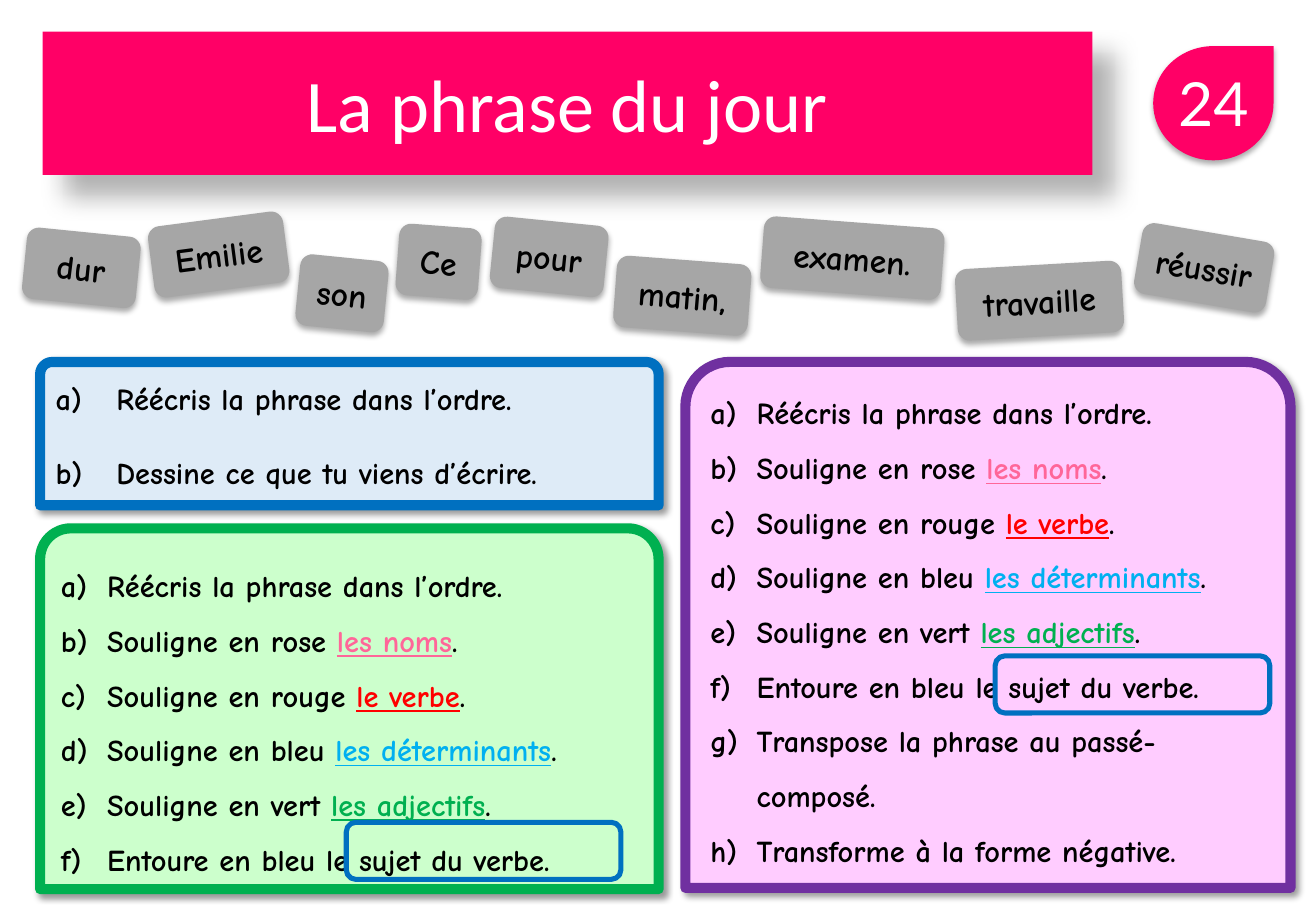
"""Build the daily sentence slide with word tiles and three task panels."""
from lxml import etree
from pptx import Presentation
from pptx.dml.color import RGBColor
from pptx.enum.shapes import MSO_SHAPE
from pptx.enum.text import MSO_ANCHOR, MSO_AUTO_SIZE, PP_ALIGN
from pptx.oxml.ns import qn
from pptx.util import Emu, Inches, Pt

ROUND, PANEL, DROP = MSO_SHAPE.ROUNDED_RECTANGLE, MSO_SHAPE.ROUND_2_SAME_RECTANGLE, MSO_SHAPE.TEAR
CENTER, LEFT, MIDDLE = PP_ALIGN.CENTER, PP_ALIGN.LEFT, MSO_ANCHOR.MIDDLE
WIDTH, HEIGHT = 10.83, 7.5
PINK, GREY, BLUE = "FF0066", "A6A6A6", "0070C0"

TITLE, NUMBER = "La phrase du jour", "24"
TILE_H = 0.59
WORDS = [
    ("dur", 0.2, 1.91, 0.94, 5.7),
    ("Emilie", 1.24, 1.8, 1.12, -7.5),
    ("son", 2.45, 2.12, 0.73, 5.7),
    ("Ce", 3.27, 1.86, 0.68, 4.3),
    ("pour", 4.05, 1.82, 0.94, 5.7),
    ("matin,", 5.06, 2.14, 1.11, 4.3),
    ("examen.", 6.27, 1.83, 1.49, 4.3),
    ("travaille", 7.87, 2.18, 1.37, -3.3),
    ("réussir", 9.36, 1.91, 1.1, 9.6),
]
REWRITE = [("Réécris la phrase dans l’ordre.", None)]
MARKS = [
    ("rose", "les noms", "FF6699"),
    ("rouge", "le verbe", "FF0000"),
    ("bleu", "les déterminants", "00B0F0"),
    ("vert", "les adjectifs", "00B050"),
]
COMMON = [REWRITE]
COMMON += [[(f"Souligne en {name} ", None), (target, color), (".", None)] for name, target, color in MARKS]
COMMON += [[("Entoure en bleu le sujet du verbe.", None)]]
DRAW = [REWRITE, [("Dessine ce que tu viens d’écrire.", None)]]
EXTRA = [[("Transpose la phrase au passé-composé.", None)], [("Transforme à la forme négative.", None)]]

COL_L, COL_R, TOP = 0.33, 5.64, 2.98
SPACED = {"line_spacing": 1.5}
PANELS = [
    ((COL_R, TOP, 4.98, 4.33), "FFCCFF", "7030A0", COMMON + EXTRA, 0.38, [{}] + [SPACED] * 7),
    ((COL_L, 4.35, 5.09, 2.97), "CCFFCC", "00B050", COMMON, 0.38, [SPACED] * 6),
    ((COL_L, TOP, 5.09, 1.18), "DEEBF7", BLUE, DRAW, 0.5, [{}, {"space_before": Pt(22)}]),
]
SUBJECT_RINGS = [(2.85, 6.77, 2.26, 0.47), (8.19, 5.4, 2.26, 0.47)]

PANEL_SHADOW = (40, 4, 3, 45)
TITLE_SHADOW = (30, 15, 18, 45)
TILE_SHADOW = (32, 3.5, 2.2, 90)


def rgb(color):
    """Turn a hex string into a colour."""
    return RGBColor.from_string(color)


def assign(target, values):
    """Set every attribute named in a dict."""
    for name, value in values.items():
        setattr(target, name, value)


def add(parent, tag, **attrs):
    """Append a drawing element and return it."""
    return etree.SubElement(parent, qn(tag), {k: str(v) for k, v in attrs.items()})


def paint(sp, fill=None, line=None, weight=0, shadow=None):
    """Give a shape its fill, outline and shadow."""
    if fill:
        sp.fill.solid()
        sp.fill.fore_color.rgb = rgb(fill)
    else:
        sp.fill.background()
    if line:
        sp.line.color.rgb = rgb(line)
        sp.line.width = Pt(weight)
    else:
        sp.line.fill.background()
    sp.shadow.inherit = False
    if shadow:
        alpha, blur, dist, angle = shadow
        effects = sp._element.spPr.find(qn("a:effectLst"))
        outer = add(effects, "a:outerShdw", blurRad=Pt(blur), dist=Pt(dist),
                    dir=angle * 60000, algn="tl", rotWithShape=0)
        color = add(outer, "a:srgbClr", val="000000")
        add(color, "a:alpha", val=alpha * 1000)


def add_box(s, kind, at, **look):
    """Add a painted preset shape."""
    sp = s.shapes.add_shape(kind, *map(Inches, at))
    paint(sp, **look)
    return sp


def write_run(p, text, size, font, color, bold=False, underline=False):
    """Add one formatted run to a paragraph."""
    r = p.add_run()
    r.text = text
    assign(r.font, {"size": Pt(size), "name": font, "bold": bold, "underline": underline})
    r.font.color.rgb = rgb(color)


def write_label(sp, text, *style, **options):
    """Write one centred line in a shape."""
    tf = sp.text_frame
    assign(tf, {"word_wrap": True, "vertical_anchor": MIDDLE, "auto_size": MSO_AUTO_SIZE.NONE})
    p = tf.paragraphs[0]
    p.alignment = CENTER
    write_run(p, text, *style, **options)


def write_tasks(sp, tasks, indent, spacings):
    """Write a lettered task list in a panel."""
    tf = sp.text_frame
    assign(tf, {"word_wrap": True, "vertical_anchor": MIDDLE})
    for i, (task, spacing) in enumerate(zip(tasks, spacings)):
        p = tf.add_paragraph() if i else tf.paragraphs[0]
        assign(p, {"alignment": LEFT, **spacing})
        pPr = p._p.get_or_add_pPr()
        pPr.set("marL", str(Inches(indent)))
        pPr.set("indent", str(-Inches(indent)))
        add(pPr, "a:buFont", typeface="Comic Neue")
        add(pPr, "a:buAutoNum", type="alphaLcParenR")
        for text, color in task:
            write_run(p, text, 18, "Comic Neue", color or "000000", bold=True, underline=bool(color))


def main():
    """Build and save the slide."""
    prs = Presentation()
    assign(prs, {"slide_width": Inches(WIDTH), "slide_height": Inches(HEIGHT)})
    s = prs.slides.add_slide(prs.slide_layouts[5])

    title = s.shapes.title
    at = map(Inches, (0.35, 0.26, 8.64, 1.18))
    assign(title, dict(zip(("left", "top", "width", "height"), at)))
    add(add(title._element.spPr, "a:prstGeom", prst="roundRect"), "a:avLst")
    paint(title, fill=PINK, shadow=TITLE_SHADOW)
    write_label(title, TITLE, 44, "Calibri", "FFFFFF")

    for at, fill, line, tasks, indent, spacings in PANELS:
        panel = add_box(s, PANEL, at, fill=fill, line=line, weight=6, shadow=PANEL_SHADOW)
        panel.adjustments[0] = 0.085
        write_tasks(panel, tasks, indent, spacings)

    badge = add_box(s, DROP, (9.49, 0.38, 0.99, 0.94), fill=PINK, shadow=TILE_SHADOW)
    assign(badge.text_frame, {"margin_left": Emu(0), "margin_right": Emu(0),
                              "margin_top": Inches(0.04), "margin_bottom": Inches(0.05)})
    write_label(badge, NUMBER, 36, "Lato", "FFFFFF")

    for word, left, top, width, angle in WORDS:
        tile = add_box(s, ROUND, (left, top, width, TILE_H), fill=GREY, shadow=TILE_SHADOW)
        tile.rotation = angle
        write_label(tile, word, 20, "Comic Neue", "000000", bold=True)

    for at in SUBJECT_RINGS:
        add_box(s, ROUND, at, line=BLUE, weight=3)

    prs.save("out.pptx")


if __name__ == "__main__":
    main()
